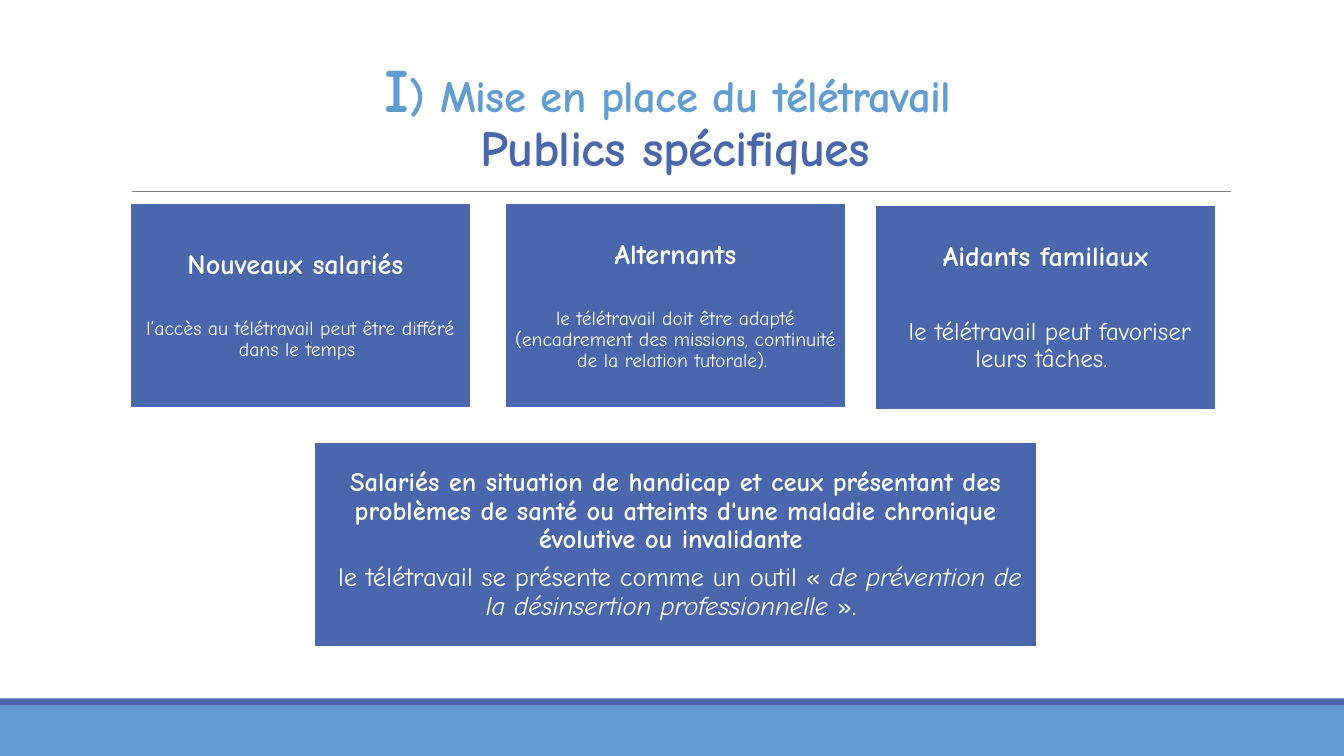
from pptx import Presentation
from pptx.dml.color import RGBColor
from pptx.enum.shapes import MSO_CONNECTOR, MSO_SHAPE
from pptx.enum.text import MSO_ANCHOR, MSO_AUTO_SIZE, PP_ALIGN
from pptx.oxml.ns import qn
from pptx.util import Inches, Pt
from lxml import etree

RECTANGLE = MSO_SHAPE.RECTANGLE
CENTER = PP_ALIGN.CENTER
MIDDLE, BOTTOM = MSO_ANCHOR.MIDDLE, MSO_ANCHOR.BOTTOM
FONT = "Comic Neue"
SKY, INDIGO, WHITE, GREY = "629DD1", "4A66AC", "FFFFFF", "808080"
WIDTH, HEIGHT = 13.33, 7.5


def color(hex_code):
    return RGBColor.from_string(hex_code)


def add_block(left, top, width, height, fill):
    block = slide.shapes.add_shape(
        RECTANGLE, Inches(left), Inches(top), Inches(width), Inches(height))
    block.shadow.inherit = False
    block.fill.solid()
    block.fill.fore_color.rgb = color(fill)
    block.line.fill.background()
    return block


prs = Presentation()
prs.slide_width, prs.slide_height = Inches(WIDTH), Inches(HEIGHT)
slide = prs.slides.add_slide(prs.slide_layouts[5])

# Footer bands and rule under the title
add_block(0, 7, WIDTH, 0.5, SKY)
add_block(0, 6.93, WIDTH, 0.07, INDIGO)
rule = slide.shapes.add_connector(
    MSO_CONNECTOR.STRAIGHT, Inches(1.31), Inches(1.9), Inches(12.21), Inches(1.9))
rule.line.color.rgb = color(GREY)
rule.line.width = Pt(0.5)
etree.SubElement(rule._element.spPr, qn("a:effectLst"))

# Title
title = slide.shapes.title
title.left, title.top = Inches(1.2), Inches(0.21)
title.width, title.height = Inches(11), Inches(1.59)
heading = title.text_frame
heading.auto_size = MSO_AUTO_SIZE.NONE
heading.word_wrap = True
heading.vertical_anchor = BOTTOM
title_line = heading.paragraphs[0]
title_line.alignment = CENTER
title_line.line_spacing = 0.85
title_line.font.name = FONT
for words, size, tint in (
        ("I", 44, SKY),
        (") Mise en place du télétravail ", 32, SKY),
        ("Publics spécifiques", 36, INDIGO)):
    if tint == INDIGO:
        title_line.add_line_break()
    run = title_line.add_run()
    run.text = words
    run.font.name = FONT
    run.font.size = Pt(size)
    run.font.bold = True
    run.font.color.rgb = color(tint)
    run.font._element.set("spc", "-50")

# Audience cards: left, top, width, heading, its size, gap after it,
# body size, body runs as (words, italic)
CARD_W, CARD_H = 3.38, 2.03
cards = (
    (1.29, 2.02, CARD_W, "Nouveaux salariés ", 20, 27, 14,
     [("l’accès au télétravail peut être différé dans le temps ", False)]),
    (5.01, 2.02, CARD_W, "Alternants", 20, 27, 14,
     [("le télétravail doit être adapté (encadrement des missions, "
       "continuité de la relation tutorale). ", False)]),
    (8.68, 2.04, CARD_W, "Aidants familiaux", 20, 33, 18,
     [(" le télétravail peut favoriser leurs tâches. ", False)]),
    (3.12, 4.39, 7.16,
     "Salariés en situation de handicap et ceux présentant des problèmes de santé "
     "ou atteints d'une maladie chronique évolutive ou invalidante ", 19, 6.65, 19,
     [(" le télétravail se présente comme un outil « ", False),
      ("de prévention de la désinsertion professionnelle ", True),
      ("». ", False)]),
)
for left, top, width, audience, audience_size, gap, body_size, body_runs in cards:
    card = add_block(left, top, width, CARD_H, INDIGO)
    card.line.color.rgb = color(WHITE)
    card.line.width = Pt(1.25)
    frame = card.text_frame
    frame.word_wrap = True
    frame.vertical_anchor = MIDDLE
    frame.margin_left = frame.margin_right = Inches(0.08)
    frame.margin_top = frame.margin_bottom = Inches(0.08)
    for paragraph, size, bold, after, runs in (
            (frame.paragraphs[0], audience_size, True, gap, [(audience, False)]),
            (frame.add_paragraph(), body_size, False, 0.35 * body_size, body_runs)):
        paragraph.alignment = CENTER
        paragraph.line_spacing = 0.9
        paragraph.space_after = Pt(after)
        paragraph.font.name = FONT
        paragraph.font.size = Pt(size)
        paragraph.font.bold = bold
        paragraph.font.color.rgb = color(WHITE)
        for words, italic in runs:
            run = paragraph.add_run()
            run.text = words
            # Runs carry the paragraph's font so that every viewer shows it
            run.font.name = FONT
            run.font.size = Pt(size)
            run.font.bold = bold
            run.font.italic = italic
            run.font.color.rgb = color(WHITE)

prs.save("out.pptx")
